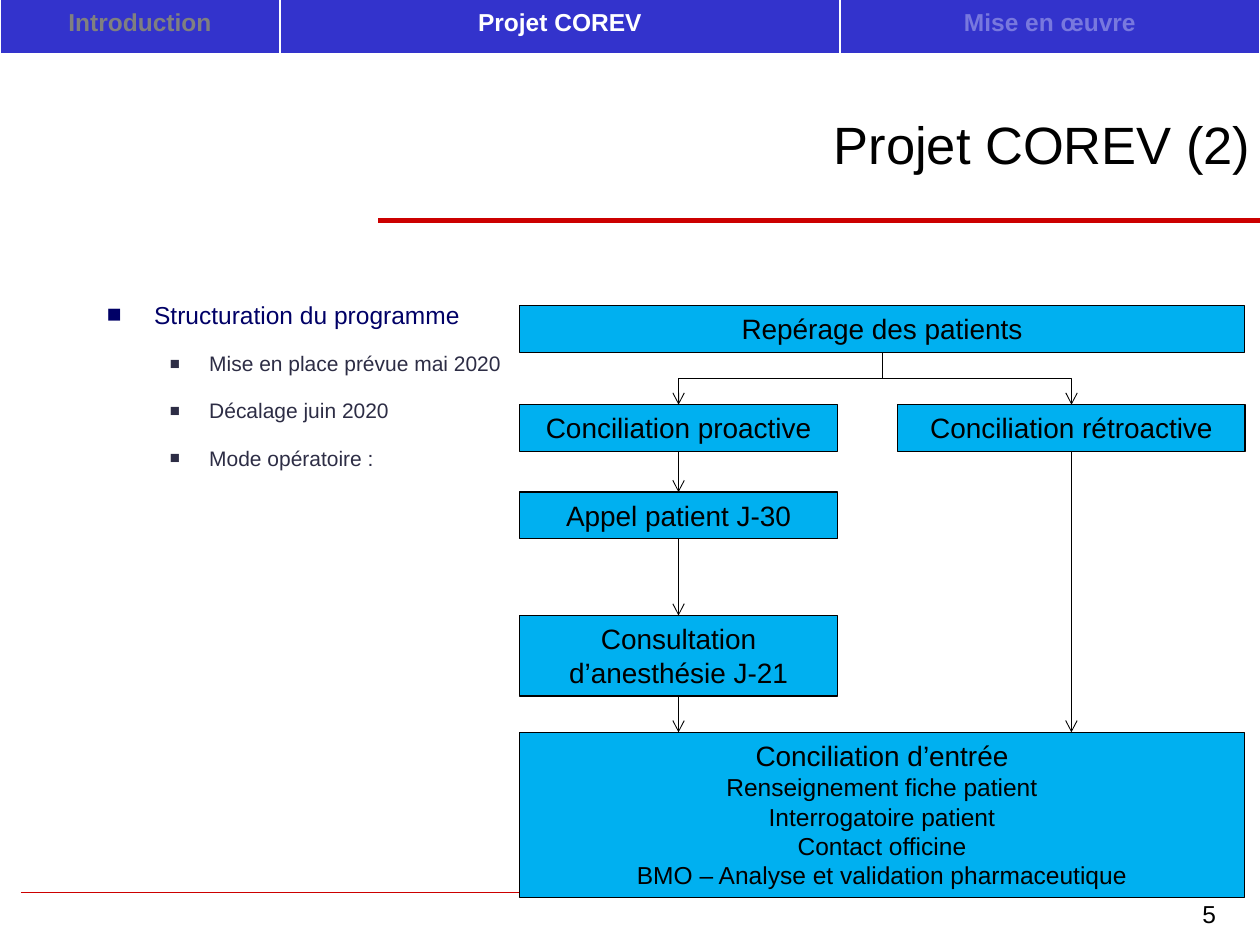
from lxml.etree import SubElement
from pptx import Presentation
from pptx.dml.color import RGBColor
from pptx.enum.shapes import MSO_CONNECTOR, MSO_SHAPE
from pptx.enum.text import MSO_ANCHOR, MSO_AUTO_SIZE, PP_ALIGN
from pptx.oxml import parse_xml
from pptx.oxml.ns import nsdecls, qn
from pptx.util import Pt


def style(par, text, size, color="000000", align=None):
    """Fill a paragraph with text and set its font and alignment."""
    par.text = text
    par.alignment = align
    font = par.font
    font.name, font.size = "Arial", Pt(size)
    font.color.rgb = RGBColor.from_string(color)


def link(x1, y1, x2, y2, color="000000", width=0.5, arrow=True):
    """Draw a straight line, or a down-across-down elbow if x1 and x2 differ."""
    if arrow and x1 != x2:
        # An elbow leaves sideways, so lay it on its side and turn it.
        midx, midy = (x1 + x2) / 2, (y1 + y2) / 2
        half, rise = (y2 - y1) / 2, abs(x2 - x1) / 2
        turn = 90 if x2 < x1 else 270
        if turn == 270:
            half = -half
        line = shapes.add_connector(
            MSO_CONNECTOR.ELBOW, Pt(midx - half), Pt(midy - rise),
            Pt(midx + half), Pt(midy + rise))
        line._element.spPr.find(qn("a:xfrm")).set("rot", str(turn * 60000))
    else:
        line = shapes.add_connector(
            MSO_CONNECTOR.STRAIGHT, Pt(x1), Pt(y1), Pt(x2), Pt(y2))
    line.line.color.rgb = RGBColor.from_string(color)
    line.line.width = Pt(width)
    if arrow:
        SubElement(line.line._get_or_add_ln(), qn("a:tailEnd"), type="arrow")
    SubElement(line._element.spPr, qn("a:effectLst"))


deck = Presentation()
deck.slide_width, deck.slide_height = Pt(720), Pt(540)
slide = deck.slides.add_slide(deck.slide_layouts[5])
shapes = slide.shapes

# Rules above and below the content
link(216, 126, 720, 126, "CC0000", 3, False)
link(12, 510, 696, 510, "CC0000", 0.75, False)

# Title
title = shapes.title
title.left, title.top, title.width, title.height = Pt(74), Pt(60.5), Pt(648), Pt(68)
frame = title.text_frame
frame.auto_size = MSO_AUTO_SIZE.NONE
frame.vertical_anchor = MSO_ANCHOR.TOP
style(frame.paragraphs[0], "Projet COREV (2)", 30, align=PP_ALIGN.RIGHT)
frame.paragraphs[0].space_before = Pt(6)

# Bulleted list
frame = shapes.add_textbox(Pt(54), Pt(156), Pt(612), Pt(324)).text_frame
frame.word_wrap = True
items = [
    ("Structuration du programme", 0),
    ("Mise en place prévue mai 2020", 1),
    ("Décalage juin 2020", 1),
    ("Mode opératoire :", 1),
]
looks = [(14, "000066", 27, 27, 100), (12, "2D2D45", 58.5, 22.5, 80)]
for i, (text, level) in enumerate(items):
    par = frame.paragraphs[0] if i == 0 else frame.add_paragraph()
    size, color, left, hang, scale = looks[level]
    par.level = level
    par.line_spacing = 1.7
    par.space_before = Pt(size * 0.2)
    props = par._p.get_or_add_pPr()
    props.set("marL", str(Pt(left)))
    props.set("indent", str(-Pt(hang)))
    SubElement(props, qn("a:buSzPct"), val=str(scale * 1000))
    SubElement(props, qn("a:buFont"), typeface="Arial")
    SubElement(props, qn("a:buChar"), char="■")
    style(par, text, size, color)

# Slide number
frame = shapes.add_textbox(Pt(552), Pt(510), Pt(150), Pt(36)).text_frame
frame.word_wrap = True
style(frame.paragraphs[0], "5", 14, align=PP_ALIGN.RIGHT)

# Navigation bar
tabs = [("Introduction", 160, "808080"), ("Projet COREV", 320, "FFFFFF"),
        ("Mise en œuvre", 240, "7878DE")]
table = shapes.add_table(1, 3, 0, Pt(-5), Pt(720), Pt(36.5)).table
for i, (text, width, color) in enumerate(tabs):
    table.columns[i].width = Pt(width)
    cell = table.cell(0, i)
    cell.vertical_anchor = MSO_ANCHOR.MIDDLE
    cell.fill.solid()
    cell.fill.fore_color.rgb = RGBColor.from_string("3333CC")
    par = cell.text_frame.paragraphs[0]
    style(par, text, 14, color, PP_ALIGN.CENTER)
    par.font.bold = True
    props = cell._tc.get_or_add_tcPr()
    for j, (side, thick) in enumerate([("L", 1), ("R", 1), ("T", 1), ("B", 3)]):
        props.insert(j, parse_xml(
            f'<a:ln{side} {nsdecls("a")} w="{Pt(thick)}"><a:solidFill>'
            f'<a:srgbClr val="FFFFFF"/></a:solidFill></a:ln{side}>'))

# Flow chart
left, wide, slim = 297, 414, 181.5
boxes = [
    (left, 174.75, wide, 26.65, ["Repérage des patients"]),
    (left, 231.25, slim, 26.65, ["Conciliation proactive"]),
    (513, 231.25, 198.5, 26.65, ["Conciliation rétroactive"]),
    (left, 281.25, slim, 26.65, ["Appel patient J-30"]),
    (left, 351.75, slim, 46, ["Consultation d’anesthésie J-21"]),
    (left, 418.5, wide, 94.3, [
        "Conciliation d’entrée", "Renseignement fiche patient",
        "Interrogatoire patient", "Contact officine",
        "BMO – Analyse et validation pharmaceutique"]),
]
for x, y, w, h, lines in boxes:
    box = shapes.add_shape(MSO_SHAPE.RECTANGLE, Pt(x), Pt(y), Pt(w), Pt(h))
    box.shadow.inherit = False
    box.fill.solid()
    box.fill.fore_color.rgb = RGBColor.from_string("00B0F0")
    box.line.color.rgb = RGBColor.from_string("000000")
    box.line.width = Pt(0.75)
    frame = box.text_frame
    frame.word_wrap = True
    frame.auto_size = MSO_AUTO_SIZE.SHAPE_TO_FIT_TEXT
    frame.vertical_anchor = MSO_ANCHOR.TOP
    for i, text in enumerate(lines):
        par = frame.paragraphs[0] if i == 0 else frame.add_paragraph()
        style(par, text, 14 if i else 16, align=PP_ALIGN.CENTER)

# Arrows from box to box
mid, near, far = left + wide / 2, left + slim / 2, 612.25
for x1, y1, x2, y2 in [
    (mid, 201.4, near, 231.25), (mid, 201.4, far, 231.25),
    (near, 257.9, near, 281.25), (near, 307.9, near, 351.75),
    (near, 397.75, near, 418.5), (far, 257.9, far, 418.5),
]:
    link(x1, y1, x2, y2)

deck.save("out.pptx")
